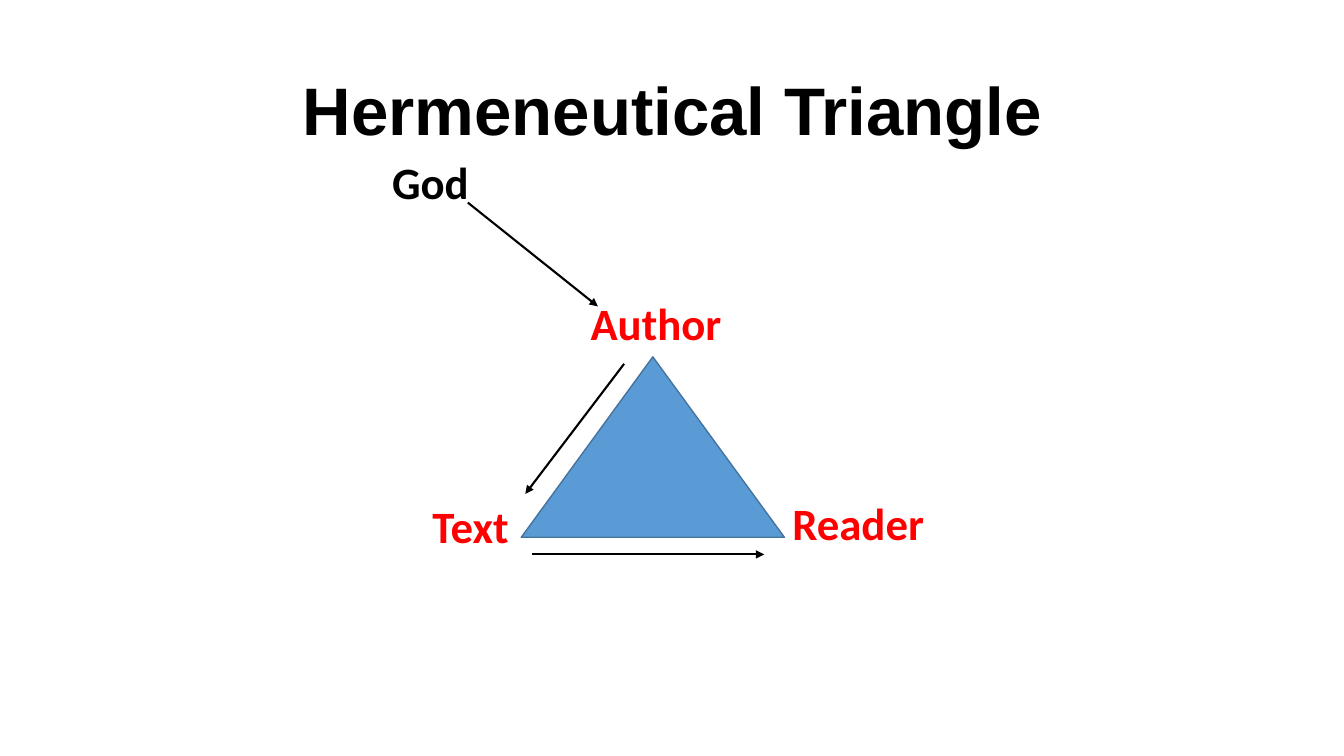
from lxml.etree import SubElement
from pptx import Presentation
from pptx.dml.color import RGBColor
from pptx.enum.shapes import MSO_CONNECTOR, MSO_SHAPE
from pptx.enum.text import MSO_ANCHOR, MSO_AUTO_SIZE, PP_ALIGN
from pptx.oxml.ns import qn
from pptx.util import Inches, Pt

TITLE = "Hermeneutical Triangle"
COLORS = {"ink": "000000", "node": "FF0000", "fill": "5B9BD5", "edge": "43739E"}
# word, colour, left, top, width
LABELS = [
    ("God", "ink", 3.79, 1.49, 1),
    ("Author", "node", 5.76, 2.88, 1.56),
    ("Reader", "node", 7.76, 4.87, 1.56),
    ("Text", "node", 4.19, 4.9, 1.07),
]
LABEL_H = 0.64
TRIANGLE = (5.17, 3.54, 2.61, 1.79)
# start x, start y, end x, end y
ARROWS = [
    (4.64, 2.01, 5.93, 3.04),  # God to Author
    (5.28, 5.5, 7.58, 5.5),  # Text to Reader
    (6.19, 3.61, 5.21, 4.9),  # Author to Text
]


def color(key):
    return RGBColor.from_string(COLORS[key])


def inches(box):
    return [Inches(n) for n in box]


def write(frame, text, size, face, key):
    run = frame.paragraphs[0].add_run()
    run.text = text
    font = run.font
    font.size, font.name, font.bold = Pt(size), face, True
    font.color.rgb = color(key)


def add_title(slide):
    title = slide.shapes.title
    title.left, title.top, title.width, title.height = inches((0.92, 0.4, 11.5, 1.45))
    frame = title.text_frame
    frame.word_wrap = True
    frame.auto_size = MSO_AUTO_SIZE.NONE
    frame.vertical_anchor = MSO_ANCHOR.MIDDLE
    para = frame.paragraphs[0]
    para.alignment = PP_ALIGN.CENTER
    para.line_spacing = 0.9
    write(frame, TITLE, 48, "Arial", "ink")


def add_label(slide, word, key, left, top, width):
    box = slide.shapes.add_textbox(*inches((left, top, width, LABEL_H)))
    frame = box.text_frame
    frame.word_wrap = True
    frame.auto_size = MSO_AUTO_SIZE.SHAPE_TO_FIT_TEXT
    write(frame, word, 32, "Calibri", key)


def add_triangle(slide):
    shape = slide.shapes.add_shape(MSO_SHAPE.ISOSCELES_TRIANGLE, *inches(TRIANGLE))
    shape.shadow.inherit = False
    shape.fill.solid()
    shape.fill.fore_color.rgb = color("fill")
    shape.line.color.rgb = color("edge")
    shape.line.width = Pt(1)


def add_arrow(slide, ends):
    arrow = slide.shapes.add_connector(MSO_CONNECTOR.STRAIGHT, *inches(ends))
    arrow.line.color.rgb = color("ink")
    arrow.line.width = Pt(1.5)
    props = arrow.element.spPr
    SubElement(props.find(qn("a:ln")), qn("a:tailEnd"), type="triangle")
    SubElement(props, qn("a:effectLst"))


def main():
    deck = Presentation()
    deck.slide_width, deck.slide_height = inches((13.33, 7.5))
    slide = deck.slides.add_slide(deck.slide_layouts[5])
    add_title(slide)
    for label in LABELS:
        add_label(slide, *label)
    add_triangle(slide)
    for ends in ARROWS:
        add_arrow(slide, ends)
    deck.save("out.pptx")


if __name__ == "__main__":
    main()
